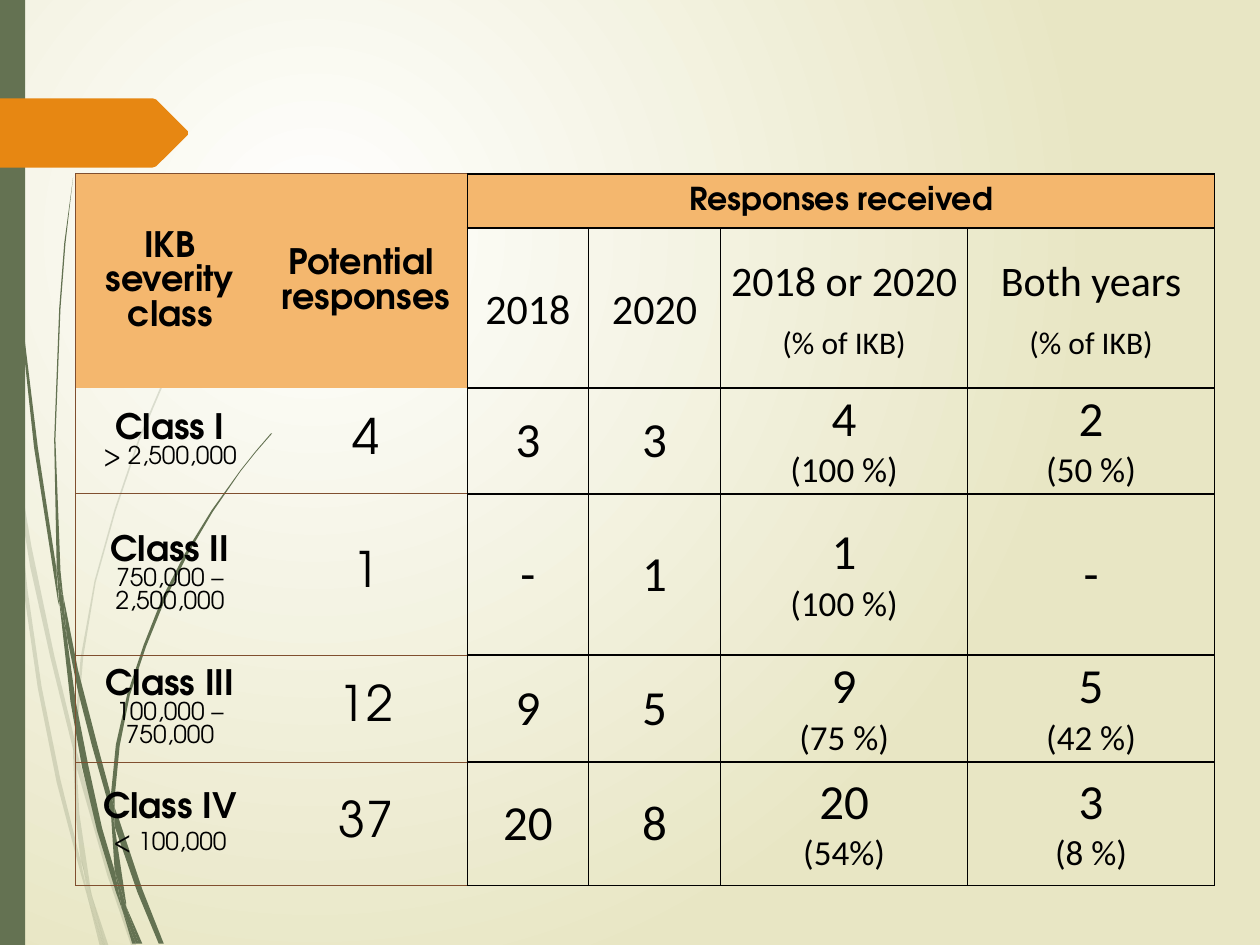
from lxml.etree import SubElement
from pptx import Presentation
from pptx.dml.color import RGBColor
from pptx.enum.shapes import MSO_SHAPE
from pptx.enum.text import MSO_ANCHOR, PP_ALIGN
from pptx.oxml.ns import qn
from pptx.util import Inches, Pt

COLORS = {"ink": "000000", "olive": "647252", "orange": "E78712", "header": "F4B76E",
          "brown": "804F2F", "glow": "FFFFFF", "sand": "E8E6C4"}
DISPLAY, BODY = "TeX Gyre Adventor", "Calibri"

# Outlines of the grass blades, in inches from the corner of their box
PALE_BLADES = [
    [(0.08, 3.5), (0.06, 3.22), (0, 2.82), (0, 2.99), (0.07, 3.44)],
    [(0.4, 5.22), (0.59, 5.99), (0.59, 5.86), (0.43, 5.2), (0.25, 4.34), (0.1, 3.45),
     (0.12, 3.76), (0.24, 4.5)],
    [(0.64, 6.07), (0.61, 5.96), (0.61, 6.1), (0.85, 6.94), (1.04, 7.5), (1.08, 7.5),
     (0.88, 6.92)],
    [(0.83, 7.5), (0.86, 7.5), (0.73, 7.11)],
    [(0.64, 6.83), (0.48, 6.19), (0.33, 5.45), (0.22, 4.69), (0.12, 3.76), (0.08, 3.5),
     (0.19, 4.7), (0.3, 5.46), (0.45, 6.21), (0.64, 6.93), (0.7, 7.14), (0.69, 7.07)],
    [(0.58, 5.99), (0.6, 6.46), (0.64, 6.83), (0.67, 6.92), (0.73, 7.11), (0.72, 7.06),
     (0.63, 6.46), (0.61, 6.1), (0.61, 6.08)],
    [(0.61, 5.84), (0.66, 5.22), (0.76, 4.62), (0.92, 4.05), (1.11, 3.49), (1.34, 2.95),
     (1.59, 2.45), (1.87, 1.98), (2.01, 1.75), (2.17, 1.54), (2.17, 1.53), (2.01, 1.75),
     (1.86, 1.97), (1.58, 2.44), (1.33, 2.94), (1.1, 3.48), (0.91, 4.04), (0.75, 4.61),
     (0.64, 5.22), (0.59, 5.84), (0.59, 5.86), (0.61, 5.96)],
    [(0.7, 7.14), (0.79, 7.5), (0.82, 7.5)],
    [(0.61, 6.08), (0.61, 6.1), (0.61, 5.96), (0.59, 5.86), (0.58, 5.99)],
    [(0.67, 6.92), (0.65, 6.83), (0.69, 7.07), (0.7, 7.14), (0.82, 7.5), (0.83, 7.5),
     (0.73, 7.11)],
]
DARK_BLADES = [
    [(0.05, 1.1), (0.14, 2.33), (0.27, 3.55), (0.46, 4.77), (0.47, 4.81), (0.45, 4.57),
     (0.45, 4.53), (0.3, 3.55), (0.15, 2.32), (0.06, 1.09), (0.04, 0.48), (0.03, 0),
     (0.02, 0), (0.03, 0.48)],
    [(0.73, 5.92), (0.88, 6.45), (0.88, 6.31), (0.77, 5.9), (0.62, 5.32), (0.5, 4.72),
     (0.53, 5.05), (0.62, 5.49)],
    [(0.94, 6.49), (0.91, 6.41), (0.91, 6.56), (1.09, 7.08), (1.26, 7.49), (1.3, 7.49),
     (1.13, 7.06)],
    [(0.91, 6.91), (0.81, 6.57), (0.7, 6.07), (0.6, 5.56), (0.53, 5.05), (0.47, 4.77),
     (0.56, 5.57), (0.65, 6.08), (0.77, 6.59), (0.92, 7.08), (0.97, 7.22), (0.96, 7.17)],
    [(0.5, 4.72), (0.48, 4.53), (0.44, 3.49), (0.48, 2.45), (0.52, 1.93), (0.58, 1.41),
     (0.51, 1.93), (0.47, 2.45), (0.43, 3.49), (0.45, 4.49), (0.49, 4.72)],
    [(1.1, 7.49), (1.13, 7.49), (1, 7.19)],
    [(0.47, 4.77), (0.53, 5.05), (0.5, 4.72), (0.49, 4.72), (0.45, 4.49), (0.45, 4.53)],
    [(0.91, 6.33), (0.95, 5.92), (1.03, 5.52), (1.16, 5.13), (1.31, 4.76), (1.49, 4.4),
     (1.69, 4.06), (1.91, 3.74), (2.03, 3.59), (2.16, 3.44), (2.15, 3.44), (2.03, 3.58),
     (1.91, 3.73), (1.68, 4.05), (1.47, 4.39), (1.29, 4.74), (1.14, 5.12), (1.01, 5.51),
     (0.92, 5.91), (0.88, 6.31), (0.91, 6.41)],
    [(0.97, 7.22), (1.05, 7.49), (1.08, 7.49)],
    [(0.88, 6.45), (0.91, 6.91), (0.96, 7.06), (1, 7.19), (1, 7.16), (0.91, 6.56),
     (0.9, 6.51)],
    [(0.88, 6.45), (0.9, 6.51), (0.91, 6.56), (0.91, 6.41), (0.88, 6.31)],
    [(0.96, 7.06), (0.91, 6.91), (0.96, 7.17), (0.97, 7.22), (1.08, 7.49), (1.1, 7.49),
     (1, 7.19)],
]
ARROW = [(0, 0), (1.21, 0), (1.24, 0.01), (1.49, 0.26), (1.49, 0.29), (1.24, 0.54),
         (1.21, 0.55), (0, 0.55)]

COLUMN_WIDTHS = [1.5, 1.61, 0.96, 1.05, 1.96, 1.96]
ROW_HEIGHTS = [0.43, 1.27, 0.84, 1.28, 0.85, 0.98]
# Class, range, potential, 2018, 2020, either year, both years
CLASSES = [
    ("Class I", "> 2,500,000", "4", "3", "3", ("4", "(100 %)"), ("2", "(50 %)")),
    ("Class II", "750,000 – 2,500,000", "1", "-", "1", ("1", "(100 %)"), ("-",)),
    ("Class III", "100,000 – 750,000", "12", "9", "5", ("9", "(75 %)"), ("5", "(42 %)")),
    ("Class IV", "< 100,000", "37", "20", "8", ("20", "(54%)"), ("3", "(8 %)")),
]


def rgb(name):
    return RGBColor.from_string(COLORS[name])


def paint(shape, color, alpha=None):
    shape.shadow.inherit = False
    shape.fill.solid()
    shape.fill.fore_color.rgb = rgb(color)
    shape.line.fill.background()
    if alpha:
        swatch = shape._element.spPr.find(qn("a:solidFill"))[0]
        SubElement(swatch, qn("a:alpha"), val=str(alpha * 1000))


def add_outline(shapes, left, top, points, color, alpha=None):
    corners = [(left + Inches(x), top + Inches(y)) for x, y in points]
    builder = shapes.build_freeform(*corners[0])
    builder.add_line_segments(corners[1:], close=True)
    paint(builder.convert_to_shape(), color, alpha)


def add_background(slide):
    fill = slide.background.fill
    fill.gradient()
    for stop, color in zip(fill.gradient_stops, ("glow", "sand")):
        stop.color.rgb = rgb(color)
    gradient = slide._element.find(".//" + qn("a:gradFill"))
    gradient.remove(gradient.find(qn("a:lin")))
    circle = SubElement(gradient, qn("a:path"), path="circle")
    SubElement(circle, qn("a:fillToRect"), l="50000", t="50000", r="100000", b="100000")


def add_decoration(slide, left, top, height):
    # Grass, side bar and arrow tab
    for blades, alpha in ((PALE_BLADES, 20), (DARK_BLADES, None)):
        grass = slide.shapes.add_group_shape()
        for blade in blades:
            add_outline(grass.shapes, left, top, blade, "olive", alpha)
    bar = slide.shapes.add_shape(MSO_SHAPE.RECTANGLE, left, top, Inches(0.2), height)
    paint(bar, "olive")
    add_outline(slide.shapes, left, top + Inches(0.78), ARROW, "orange")


def set_borders(cell, edges):
    properties = cell._tc.get_or_add_tcPr()
    for side in "LRTB":
        color, width = edges.get(side, (None, 0))
        line = SubElement(properties, qn(f"a:ln{side}"), w=str(Pt(width)))
        if color:
            fill = SubElement(line, qn("a:solidFill"))
            SubElement(fill, qn("a:srgbClr"), val=COLORS[color])
        else:
            SubElement(line, qn("a:noFill"))


def edges_of(cell, row, column):
    black, brown = ("ink", 1), ("brown", 0.75)
    if column >= 2:
        sides = "LRTB" if not cell.is_spanned else "RTB" if column == 5 else "TB"
        return dict.fromkeys(sides, black)
    edges = {"L": brown} if column == 0 else {"R": black}
    if row in (3, 5):
        edges.update(T=brown, B=brown)
    elif row == 0:
        edges["T"] = brown
    return edges


def write(cell, lines, font, spacing=1.0, gap=0, bold=False):
    """Each line is (text, size); a vertical tab breaks a line."""
    frame = cell.text_frame
    for index, (text, size) in enumerate(lines):
        paragraph = frame.add_paragraph() if index else frame.paragraphs[0]
        paragraph.text = text
        paragraph.alignment = PP_ALIGN.CENTER
        paragraph.line_spacing = spacing
        paragraph.space_before = paragraph.space_after = Pt(gap)
        for style in [paragraph.font] + [run.font for run in paragraph.runs]:
            style.name, style.size, style.bold = font, Pt(size), bold
            style.color.rgb = rgb("ink")


def fill_header(table):
    for column, text, size in ((0, "IKB severity class", 20),
                               (1, "Potential \vresponses", 20),
                               (2, "Responses received", 18)):
        write(table.cell(0, column), [(text, size)], DISPLAY, 1.07, 4, True)
    subheads = [["2018"], ["2020"], ["2018 or 2020", "(% of IKB)"], ["Both years", "(% of IKB)"]]
    for column, lines in enumerate(subheads, 2):
        write(table.cell(1, column), zip(lines, (24, 18)), BODY, 1.07, 4)


def fill_class(table, row, name, limits, potential, first, second, either, both):
    label = table.cell(row, 0)
    if name == "Class IV":
        write(label, [(name, 20), (limits, 14)], DISPLAY, 1.02, 2)
    else:
        write(label, [(f"{name}\v{limits}", 20)], DISPLAY, 1.02, 2)
        label.text_frame.paragraphs[0].runs[-1].font.size = Pt(14)
    label.text_frame.paragraphs[0].runs[0].font.bold = True
    for column, (count, font) in enumerate(((potential, DISPLAY), (first, BODY), (second, BODY)), 1):
        write(table.cell(row, column), [(count, 28)], font, gap=6)
    for column, lines in enumerate((either, both), 4):
        write(table.cell(row, column), zip(lines, (28, 20)), BODY)


def add_response_table(slide, left, top, width, height):
    frame = slide.shapes.add_table(len(ROW_HEIGHTS), len(COLUMN_WIDTHS), left, top, width, height)
    table = frame.table
    table.first_row = table.horz_banding = False
    # Plain style without grid
    table._tbl.tblPr.find(qn("a:tableStyleId")).text = "{2D5ABB26-0587-4C30-8999-92F81FD0307C}"
    for column, size in zip(table.columns, COLUMN_WIDTHS):
        column.width = Inches(size)
    for row, size in zip(table.rows, ROW_HEIGHTS):
        row.height = Inches(size)
    for start, end in (((0, 0), (1, 0)), ((0, 1), (1, 1)), ((0, 2), (0, 5))):
        table.cell(*start).merge(table.cell(*end))
    for row in range(len(ROW_HEIGHTS)):
        for column in range(len(COLUMN_WIDTHS)):
            cell = table.cell(row, column)
            set_borders(cell, edges_of(cell, row, column))
            header = row == 0 or (row == 1 and column < 2)
            side, end = (0.09, 0.05) if header else (0.06, 0)
            cell.margin_left = cell.margin_right = Inches(side)
            cell.margin_top = cell.margin_bottom = Inches(end)
            cell.vertical_anchor = MSO_ANCHOR.MIDDLE
            if header:
                cell.fill.solid()
                cell.fill.fore_color.rgb = rgb("header")
            else:
                cell.fill.background()
    fill_header(table)
    for row, values in enumerate(CLASSES, 2):
        fill_class(table, row, *values)


def main():
    deck = Presentation()
    deck.slide_width, deck.slide_height = Inches(10), Inches(7.5)
    slide = deck.slides.add_slide(deck.slide_layouts[6])
    add_background(slide)
    add_decoration(slide, 0, 0, deck.slide_height)
    add_response_table(slide, Inches(0.6), Inches(1.38), Inches(9.04), Inches(5.65))
    deck.save("out.pptx")


if __name__ == "__main__":
    main()
